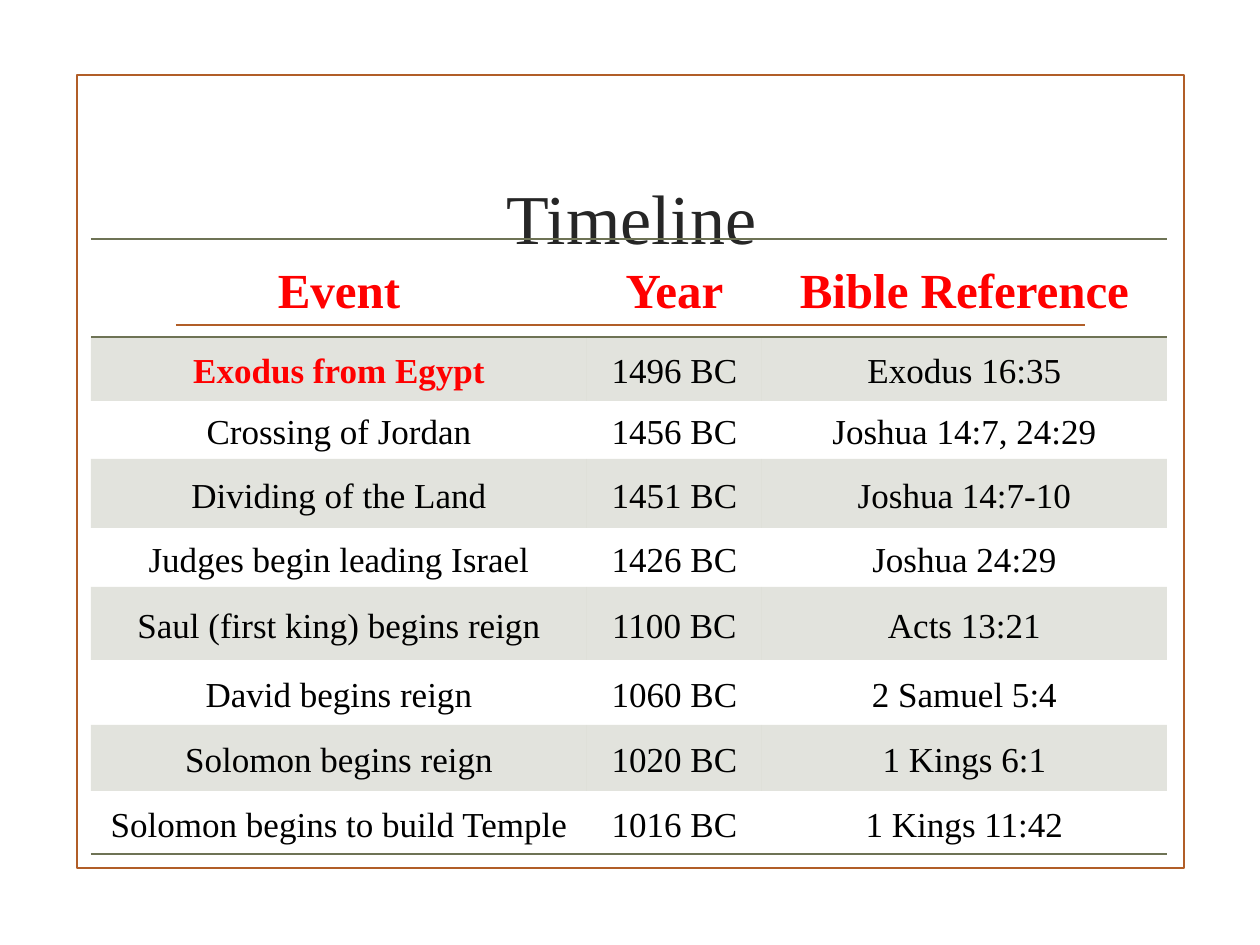
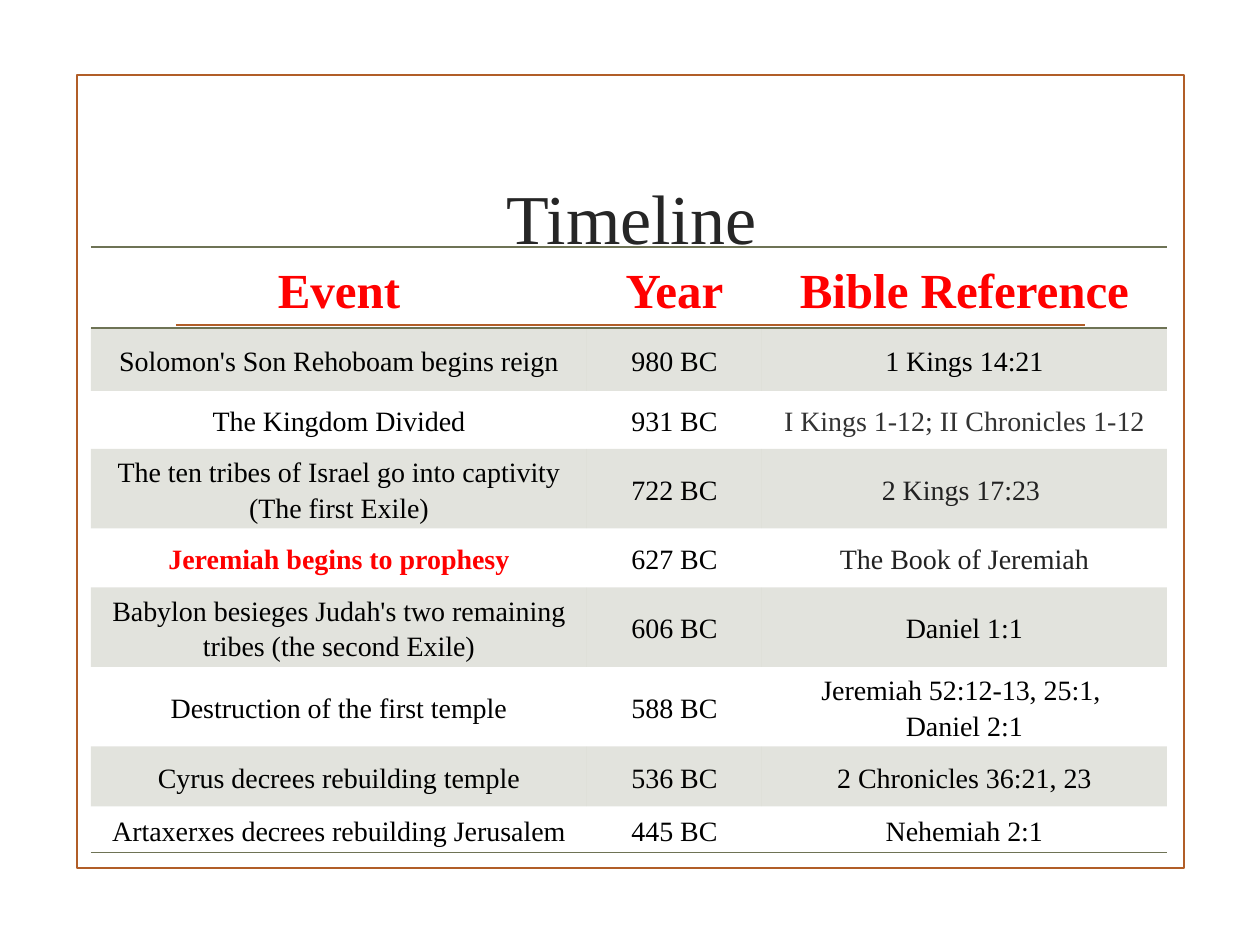
from lxml.etree import SubElement
from pptx import Presentation
from pptx.dml.color import RGBColor
from pptx.enum.shapes import MSO_CONNECTOR as Connector, MSO_SHAPE as Preset
from pptx.enum.text import MSO_ANCHOR as Anchor, PP_ALIGN as Align
from pptx.oxml import parse_xml
from pptx.oxml.ns import nsdecls, qn
from pptx.util import Emu, Pt

EMU_PER_PX = 914400 / 126
FONT = "Times New Roman"
RUST = RGBColor(0xB1, 0x5E, 0x28)
OLIVE = RGBColor(0x6E, 0x73, 0x55)
RED = RGBColor(0xFF, 0x00, 0x00)
BLACK = RGBColor(0x00, 0x00, 0x00)
TITLE_GRAY = RGBColor(0x26, 0x26, 0x26)
DARK_GRAY = RGBColor(0x33, 0x33, 0x33)
DEEP_GRAY = RGBColor(0x22, 0x22, 0x22)

NO_TABLE_STYLE = "{2D5ABB26-0587-4C30-8999-92F81FD0307C}"
TABLE_LEFT = 91
COLUMN_WIDTHS = [496, 175, 405]
HEADER = ("Event", "Year", "Bible Reference")
CELL_INSET = 4
BAND_OPACITY = 20

# Events of each slide
EARLY_EVENTS = [
    ("Exodus from Egypt", "1496 BC", "Exodus 16:35"),
    ("Crossing of Jordan", "1456 BC", "Joshua 14:7, 24:29"),
    ("Dividing of the Land", "1451 BC", "Joshua 14:7-10"),
    ("Judges begin leading Israel", "1426 BC", "Joshua 24:29"),
    ("Saul (first king) begins reign", "1100 BC", "Acts 13:21"),
    ("David begins reign", "1060 BC", "2 Samuel 5:4"),
    ("Solomon begins reign", "1020 BC", "1 Kings 6:1"),
    ("Solomon begins to build Temple", "1016 BC", "1 Kings 11:42"),
]
LATE_EVENTS = [
    ("Solomon's Son Rehoboam begins reign", "980 BC", "1 Kings 14:21"),
    ("The Kingdom Divided", "931 BC", "I Kings 1-12; II Chronicles 1-12"),
    ("The ten tribes of Israel go into captivity (The first Exile)", "722 BC", "2 Kings 17:23 "),
    ("Jeremiah begins to prophesy", "627 BC", "The Book of Jeremiah"),
    ("Babylon besieges Judah's two remaining tribes (the second Exile)", "606 BC", "Daniel 1:1"),
    ("Destruction of the first temple", "588 BC", "Jeremiah 52:12-13, 25:1, \nDaniel 2:1"),
    ("Cyrus decrees rebuilding temple", "536 BC", "2 Chronicles 36:21, 23"),
    ("Artaxerxes decrees rebuilding Jerusalem", "445 BC", "Nehemiah 2:1"),
]
# Cells whose text is not plain black
TEXT_COLORS = {
    "Exodus from Egypt": RED,
    "Jeremiah begins to prophesy": RED,
    "I Kings 1-12; II Chronicles 1-12": DARK_GRAY,
    "2 Kings 17:23 ": DEEP_GRAY,
    "The Book of Jeremiah": DEEP_GRAY,
}


def px(length):
    return Emu(round(length * EMU_PER_PX))


class TimelineDeck:
    def __init__(self):
        self.presentation = Presentation()
        self.presentation.slide_width = px(1260)
        self.presentation.slide_height = px(945)
        self.slide = None

    def add_slide(self, title):
        layout = self.presentation.slide_layouts[5]
        self.slide = self.presentation.slides.add_slide(layout)
        self.title(title)
        self.frame(77, 75, 1107, 793)
        self.rule(176, 1085, 325)

    def title(self, text):
        shape = self.slide.shapes.title
        shape.left, shape.top = px(163), px(126)
        shape.width, shape.height = px(937), px(180)
        shape.text_frame.vertical_anchor = Anchor.MIDDLE
        self.add_text(shape.text_frame, text, 40, TITLE_GRAY)

    def frame(self, left, top, width, height):
        shape = self.slide.shapes.add_shape(
            Preset.RECTANGLE, px(left), px(top), px(width), px(height))
        shape.shadow.inherit = False
        shape.fill.background()
        shape.line.color.rgb = RUST
        shape.line.width = Pt(1.25)

    def rule(self, left, right, top):
        line = self.slide.shapes.add_connector(
            Connector.STRAIGHT, px(left), px(top), px(right), px(top))
        line.line.color.rgb = RUST
        line.line.width = Pt(1.25)
        SubElement(line._element.spPr, qn("a:effectLst"))

    def add_text(self, text_frame, text, size, color, bold=False, spacing=None):
        for index, content in enumerate(text.split("\n")):
            paragraph = text_frame.add_paragraph() if index else text_frame.paragraphs[0]
            paragraph.alignment = Align.CENTER
            paragraph.line_spacing = spacing
            run = paragraph.add_run()
            run.text = content
            run.font.name = FONT
            run.font.size = Pt(size)
            run.font.bold = bold
            run.font.color.rgb = color

    def border(self, cell, sides):
        properties = cell._tc.get_or_add_tcPr()
        for index, side in enumerate(sides):
            properties.insert(index, parse_xml(
                f'<a:ln{side} {nsdecls("a")} w="12700"><a:solidFill>'
                f'<a:srgbClr val="{OLIVE}"/></a:solidFill></a:ln{side}>'))

    def band(self, cell):
        cell.fill.solid()
        cell.fill.fore_color.rgb = OLIVE
        color = cell._tc.tcPr.find(".//" + qn("a:srgbClr"))
        SubElement(color, qn("a:alpha"), val=str(BAND_OPACITY * 1000))

    def table(self, top, row_heights, events, size):
        rows = [HEADER, *events]
        graphic = self.slide.shapes.add_table(
            len(rows), len(HEADER), px(TABLE_LEFT), px(top),
            px(sum(COLUMN_WIDTHS)), px(sum(row_heights)))
        table = graphic.table
        table.first_row = table.horz_banding = False
        table._tbl.tblPr.find(qn("a:tableStyleId")).text = NO_TABLE_STYLE
        for column, width in zip(table.columns, COLUMN_WIDTHS):
            column.width = px(width)
        for row, height in zip(table.rows, row_heights):
            row.height = px(height)

        for row_index, texts in enumerate(rows):
            for column_index, text in enumerate(texts):
                cell = table.cell(row_index, column_index)
                cell.vertical_anchor = Anchor.MIDDLE
                cell.margin_left = cell.margin_right = px(CELL_INSET)
                cell.margin_top = cell.margin_bottom = px(CELL_INSET)
                is_header = row_index == 0
                color = RED if is_header else TEXT_COLORS.get(text, BLACK)
                self.add_text(cell.text_frame, text, 28 if is_header else size,
                              color, color == RED, 1.15)
                if row_index % 2:
                    self.band(cell)
                else:
                    cell.fill.background()
                if is_header:
                    self.border(cell, "TB")
                elif row_index == len(events):
                    self.border(cell, "B")


def main():
    deck = TimelineDeck()

    # Exodus to the Temple
    deck.add_slide("Timeline")
    deck.table(239, [98, 64, 58, 69, 59, 73, 65, 66, 63], EARLY_EVENTS, 20)

    # Divided kingdom to the return
    deck.add_slide("Timeline")
    deck.table(247, [81, 63, 58, 79, 59, 79, 79, 60, 46], LATE_EVENTS, 16)

    deck.presentation.save("out.pptx")


if __name__ == "__main__":
    main()
